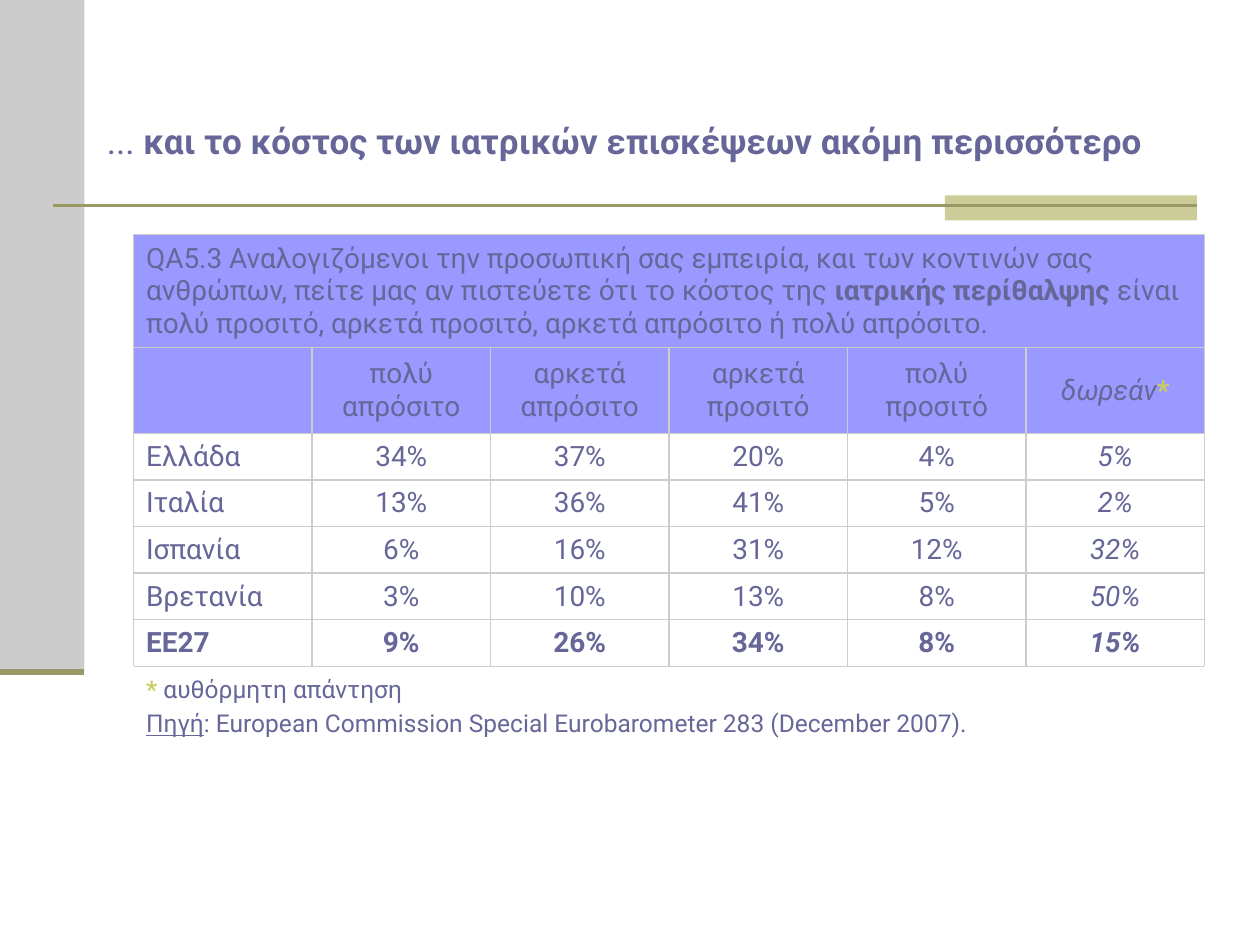
from lxml import etree
from pptx import Presentation
from pptx.dml.color import RGBColor
from pptx.enum import shapes, text
from pptx.oxml import ns
from pptx.util import Inches, Pt

SLATE = RGBColor(0x66, 0x66, 0x99)
LAVENDER = RGBColor(0x99, 0x99, 0xFF)
GREY = RGBColor(0xCC, 0xCC, 0xCC)
SAND = RGBColor(0xCC, 0xCC, 0x99)
OLIVE = RGBColor(0x99, 0x99, 0x66)
MUSTARD = RGBColor(0xCC, 0xCC, 0x66)
FONT = "Roboto"

QUESTION = [
    ("QA5.3 Αναλογιζόμενοι την προσωπική σας εμπειρία, και των κοντινών σας "
     "ανθρώπων, πείτε μας αν πιστεύετε ότι το κόστος της ", {}),
    ("ιατρικής περίθαλψης", {"bold": True}),
    (" είναι πολύ προσιτό, αρκετά προσιτό, αρκετά απρόσιτο ή πολύ απρόσιτο.", {}),
]
ANSWERS = ["", "πολύ απρόσιτο", "αρκετά απρόσιτο", "αρκετά προσιτό", "πολύ προσιτό"]
COUNTRIES = [
    ("Ελλάδα", "34%", "37%", "20%", "4%", "5%"),
    ("Ιταλία", "13%", "36%", "41%", "5%", "2%"),
    ("Ισπανία", "6%", "16%", "31%", "12%", "32%"),
    ("Βρετανία", "3%", "10%", "13%", "8%", "50%"),
    ("ΕΕ27", "9%", "26%", "34%", "8%", "15%"),
]
FOOTNOTE = [("* ", {"color": MUSTARD, "bold": True}), ("αυθόρμητη απάντηση", {})]
SOURCE = [
    ("Πηγή", {"underline": True}),
    (": European Commission Special Eurobarometer 283 (December 2007).", {}),
]
ROW_HEIGHTS = [0.9, 0.68] + [0.37] * len(COUNTRIES) + [0.65]


def write(paragraph, runs, size, align=text.PP_ALIGN.LEFT):
    paragraph.alignment = align
    for words, style in runs:
        run = paragraph.add_run()
        run.text = words
        font = run.font
        font.name, font.size = FONT, Pt(size)
        font.color.rgb = style.get("color", SLATE)
        font.bold = style.get("bold", False)
        font.italic = style.get("italic", False)
        font.underline = style.get("underline", False)


def add_block(slide, left, top, width, height, color):
    block = slide.shapes.add_shape(
        shapes.MSO_SHAPE.RECTANGLE, Inches(left), Inches(top), Inches(width), Inches(height))
    block.shadow.inherit = False
    block.fill.solid()
    block.fill.fore_color.rgb = color
    block.line.fill.background()


def add_rule(slide, left, right, y, weight):
    rule = slide.shapes.add_connector(
        shapes.MSO_CONNECTOR.STRAIGHT, Inches(left), Inches(y), Inches(right), Inches(y))
    rule.line.color.rgb = OLIVE
    rule.line.width = Pt(weight)
    etree.SubElement(rule._element.spPr, ns.qn("a:effectLst"))


def add_sidebar(slide, left, top, width, height):
    add_block(slide, left, top, width, height, GREY)
    add_rule(slide, left, left + width, top + height, 3.5)


def add_divider(slide, left, top, width, height):
    right, accent = left + width, 2
    add_block(slide, right - accent, top, accent, height, SAND)
    add_rule(slide, left, right, top + 0.08, 1.5)


def add_title(slide, left, top, width, height):
    title = slide.shapes.add_textbox(Inches(left), Inches(top), Inches(width), Inches(height))
    frame = title.text_frame
    frame.word_wrap = True
    frame.vertical_anchor = text.MSO_ANCHOR.BOTTOM
    frame.margin_bottom = Inches(0.38)
    write(frame.paragraphs[0], [
        ("...", {}),
        (" και το κόστος των ιατρικών επισκέψεων ακόμη περισσότερο", {"bold": True}),
    ], 20)


def set_borders(cell, sides):
    properties = cell._tc.get_or_add_tcPr()
    for side in sides:
        border = etree.SubElement(properties, ns.qn(f"a:ln{side}"), w=str(Pt(1)))
        fill = etree.SubElement(border, ns.qn("a:solidFill"))
        etree.SubElement(fill, ns.qn("a:srgbClr"), val=str(GREY))


def fill_cell(cell, shaded):
    if not shaded:
        cell.fill.background()
        return
    cell.fill.solid()
    cell.fill.fore_color.rgb = LAVENDER
    tint = cell._tc.tcPr.find(".//" + ns.qn("a:srgbClr"))
    etree.SubElement(tint, ns.qn("a:alpha"), val="50000")


def add_survey(slide, left, top, width, height):
    columns = len(COUNTRIES[0])
    last = len(ROW_HEIGHTS) - 1
    survey = slide.shapes.add_table(
        len(ROW_HEIGHTS), columns, Inches(left), Inches(top), Inches(width), Inches(height)).table
    survey.first_row = survey.horz_banding = False
    for column in survey.columns:
        column.width = Inches(width / columns)
    for index, row_height in enumerate(ROW_HEIGHTS):
        survey.rows[index].height = Inches(row_height)
        for cell in survey.rows[index].cells:
            cell.vertical_anchor = text.MSO_ANCHOR.MIDDLE
            set_borders(cell, "T" if index == last else "LRTB")
            fill_cell(cell, index < 2)
    for index in (0, last):
        survey.cell(index, 0).merge(survey.cell(index, columns - 1))

    write(survey.cell(0, 0).text_frame.paragraphs[0], QUESTION, 16)
    header = [[(answer, {})] if answer else [] for answer in ANSWERS]
    header.append([("δωρεάν", {"italic": True}), ("*", {"color": MUSTARD, "bold": True})])
    body = [
        [[(value, {"bold": country == COUNTRIES[-1], "italic": column == columns - 1})]
         for column, value in enumerate(country)]
        for country in COUNTRIES
    ]
    for index, entries in enumerate([header] + body, start=1):
        for column, runs in enumerate(entries):
            align = text.PP_ALIGN.CENTER if column else text.PP_ALIGN.LEFT
            write(survey.cell(index, column).text_frame.paragraphs[0], runs, 16, align)

    notes = survey.cell(last, 0).text_frame
    write(notes.paragraphs[0], FOOTNOTE, 14)
    source = notes.add_paragraph()
    source.space_before = Pt(3)
    write(source, SOURCE, 14)


def main():
    deck = Presentation()
    deck.slide_width, deck.slide_height = Inches(10), Inches(7.5)
    slide = deck.slides.add_slide(deck.slide_layouts[6])
    add_sidebar(slide, 0, 0, 0.67, 5.33)
    add_divider(slide, 0.42, 1.55, 9.08, 0.2)
    add_survey(slide, 1.06, 1.86, 8.5, sum(ROW_HEIGHTS))
    add_title(slide, 0.75, 0.11, 8.9, 1.55)
    deck.save("out.pptx")


if __name__ == "__main__":
    main()
